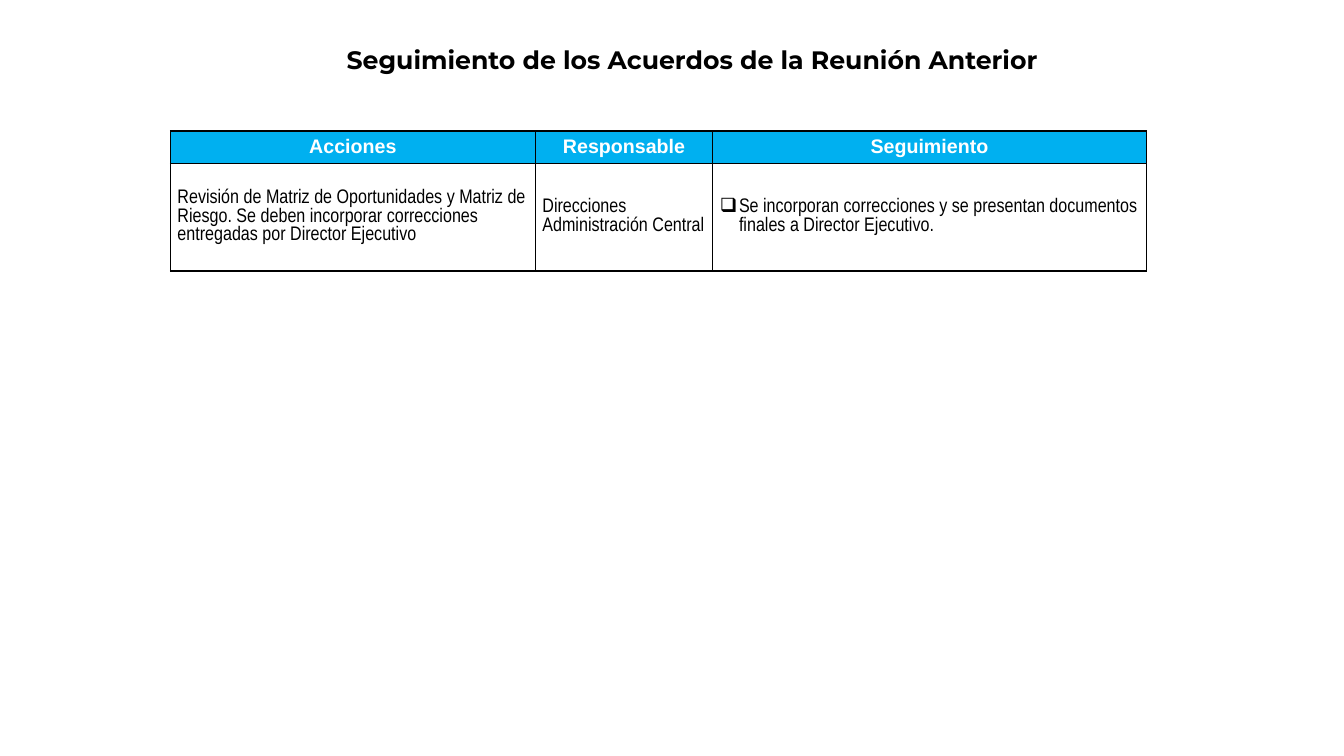
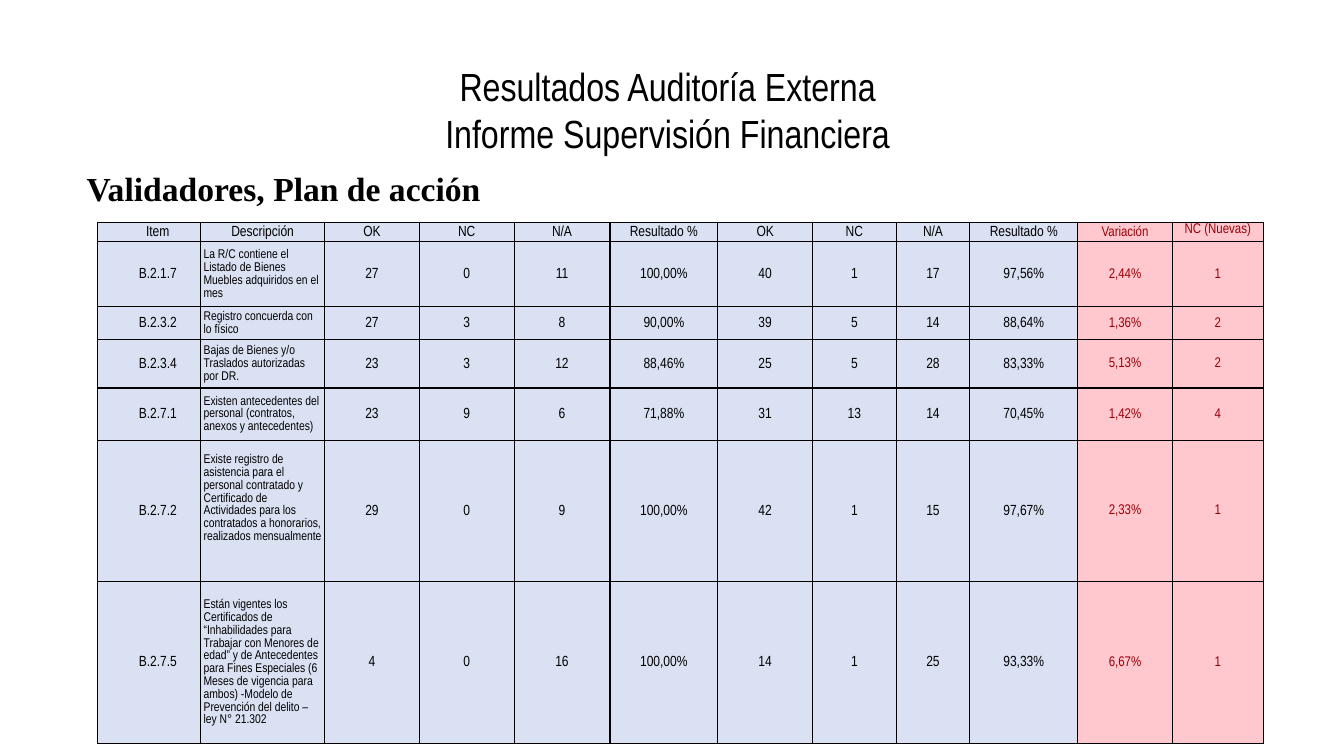
import lxml.etree
import pptx
import pptx.dml.color
import pptx.enum.text
import pptx.oxml.ns
import pptx.util

Inches = pptx.util.Inches
Pt = pptx.util.Pt
ALIGN = pptx.enum.text.PP_ALIGN
ANCHOR = pptx.enum.text.MSO_ANCHOR

BLACK, WHITE, SKY = "000000", "FFFFFF", "00B0F0"
PALE_BLUE, PINK, DARK_RED = "D9E1F2", "FFC7CE", "9C0006"
NARROW = "Arial Narrow"


def rgb(value):
    return pptx.dml.color.RGBColor.from_string(value)


def sub(parent, tag, **attributes):
    element = lxml.etree.SubElement(parent, pptx.oxml.ns.qn(tag))
    for key, value in attributes.items():
        element.set(key, str(value))
    return element


class Deck:
    """Shared style and the slide being filled."""

    def __init__(self):
        self.file = pptx.Presentation()
        self.file.slide_width = Inches(13.33)
        self.file.slide_height = Inches(7.5)
        self.slide = None

    def add_slide(self):
        self.slide = self.file.slides.add_slide(self.file.slide_layouts[5])

    def style(self, paragraph, size, font=NARROW, color=BLACK, bold=False,
              align=ALIGN.LEFT, spacing=None):
        paragraph.alignment = align
        if spacing:
            paragraph.line_spacing = spacing
        for run in paragraph.runs:
            run.font.size = Pt(size)
            run.font.name = font
            run.font.bold = bold
            run.font.color.rgb = rgb(color)

    def indent(self, paragraph, left=0, first=0, bullet=None):
        properties = paragraph._p.get_or_add_pPr()
        properties.set("marL", str(Inches(left)))
        properties.set("indent", str(Inches(first)))
        if bullet:
            sub(sub(properties, "a:buClr"), "a:srgbClr", val=BLACK)
            sub(properties, "a:buChar", char=bullet)

    def title(self, text, left, top, width, height, size, **look):
        heading = self.slide.shapes.title
        heading.left, heading.top = Inches(left), Inches(top)
        heading.width, heading.height = Inches(width), Inches(height)
        frame = heading.text_frame
        frame.text = text
        frame.word_wrap = True
        frame.auto_size = pptx.enum.text.MSO_AUTO_SIZE.NONE
        frame.vertical_anchor = ANCHOR.MIDDLE
        for paragraph in frame.paragraphs:
            self.style(paragraph, size, align=ALIGN.CENTER, **look)
        return frame

    def text(self, text, left, top, width, height, size, **look):
        box = self.slide.shapes.add_textbox(
            Inches(left), Inches(top), Inches(width), Inches(height))
        box.text_frame.word_wrap = True
        box.text_frame.text = text
        self.style(box.text_frame.paragraphs[0], size, **look)

    def table(self, left, top, widths, heights):
        frame = self.slide.shapes.add_table(
            len(heights), len(widths), Inches(left), Inches(top),
            Inches(sum(widths)), Inches(sum(heights)))
        grid = frame.table
        grid.first_row = grid.horz_banding = False
        for column, width in zip(grid.columns, widths):
            column.width = Inches(width)
        for row, height in zip(grid.rows, heights):
            row.height = Inches(height)
        return grid

    def cell(self, cell, text, size, fill, side=0.03, **look):
        cell.text_frame.text = text
        cell.vertical_anchor = ANCHOR.MIDDLE
        cell.margin_left = cell.margin_right = Inches(side)
        cell.margin_top = cell.margin_bottom = 0
        # Borders come before the fill in the cell properties
        properties = cell._tc.get_or_add_tcPr()
        for edge in ("a:lnL", "a:lnR", "a:lnT", "a:lnB"):
            line = sub(properties, edge, w=Pt(1))
            sub(sub(line, "a:solidFill"), "a:srgbClr", val=BLACK)
        cell.fill.solid()
        cell.fill.fore_color.rgb = rgb(fill)
        paragraph = cell.text_frame.paragraphs[0]
        self.style(paragraph, size, **look)
        return paragraph


def agreements_slide(deck):
    deck.add_slide()
    deck.title("Seguimiento de los Acuerdos de la Reunión Anterior",
               2.81, 0.18, 8.11, 0.81, 18, font="Montserrat", bold=True)

    # Agreements table: heading and action per column
    columns = [
        ("Acciones", "Revisión de Matriz de Oportunidades y Matriz de Riesgo. "
         "Se deben incorporar correcciones entregadas por Director Ejecutivo"),
        ("Responsable", "Direcciones Administración Central"),
        ("Seguimiento", "Se incorporan correcciones y se presentan documentos "
         "finales a Director Ejecutivo."),
    ]
    agreements = deck.table(1.69, 1.3, [3.62, 1.76, 4.3], [0.32, 1.07])
    for index, (heading, content) in enumerate(columns):
        deck.cell(agreements.cell(0, index), heading, 14, SKY, font="Arial",
                  color=WHITE, bold=True, align=ALIGN.CENTER)
        follow_up = deck.cell(agreements.cell(1, index), content, 14, WHITE, side=0.07)
    deck.indent(follow_up, 0.19, -0.19, "❑")


def audit_slide(deck):
    deck.add_slide()
    heading = deck.title("Resultados Auditoría Externa\nInforme Supervisión Financiera",
                         2.93, 0.55, 7.24, 1.07, 28, spacing=Pt(33.5))
    deck.indent(heading.paragraphs[0], 0.14)

    # Validators table
    results = ["OK", "NC", "N/A", "Resultado %"]
    rows = [
        ["Item", "Descripción", *results, *results, "Variación", "NC (Nuevas)"],
        ["B.2.1.7", "La R/C contiene el Listado de Bienes Muebles adquiridos en el mes",
         "27", "0", "11", "100,00%", "40", "1", "17", "97,56%", "2,44%", "1"],
        ["B.2.3.2", "Registro concuerda con lo físico",
         "27", "3", "8", "90,00%", "39", "5", "14", "88,64%", "1,36%", "2"],
        ["B.2.3.4", "Bajas de Bienes y/o Traslados autorizadas por DR.",
         "23", "3", "12", "88,46%", "25", "5", "28", "83,33%", "5,13%", "2"],
        ["B.2.7.1", "Existen antecedentes del personal (contratos, anexos y antecedentes)",
         "23", "9", "6", "71,88%", "31", "13", "14", "70,45%", "1,42%", "4"],
        ["B.2.7.2", "Existe registro de asistencia para el personal contratado y "
         "Certificado de Actividades para los contratados a honorarios, "
         "realizados mensualmente",
         "29", "0", "9", "100,00%", "42", "1", "15", "97,67%", "2,33%", "1"],
        ["B.2.7.5", "Están vigentes los Certificados de “Inhabilidades para Trabajar "
         "con Menores de edad” y de Antecedentes para Fines Especiales (6 Meses de "
         "vigencia para ambos) -Modelo de Prevención del delito – ley N° 21.302",
         "4", "0", "16", "100,00%", "14", "1", "25", "93,33%", "6,67%", "1"],
    ]
    widths = [1.02, 1.23, 0.94, 0.94, 0.95, 1.07, 0.94, 0.83, 0.73, 1.07, 0.94, 0.9]
    validators = deck.table(0.97, 2.21, widths, [0.19, 0.64, 0.33, 0.48, 0.52, 1.4, 1.61])
    for r, row in enumerate(rows):
        for c, value in enumerate(row):
            size, fill, color, align = 10.5, PALE_BLUE, BLACK, ALIGN.CENTER
            if c >= 10:  # change against the earlier audit
                size, fill, color = 10, PINK, DARK_RED
            elif c == 1 and r > 0:  # descriptions
                size, align = 9, ALIGN.LEFT
            entry = deck.cell(validators.cell(r, c), value, size, fill,
                              color=color, align=align, spacing=1.07)
            if c == 0:
                deck.indent(entry, first=0.17)
    validators.cell(0, 11).vertical_anchor = ANCHOR.TOP
    validators.cell(5, 1).margin_bottom = Inches(0.25)

    # Section heading
    deck.text("Validadores, Plan de acción", 0.76, 1.62, 12.25, 0.5, 24,
              font="Times New Roman", bold=True, align=ALIGN.JUSTIFY)


def main():
    deck = Deck()
    agreements_slide(deck)
    audit_slide(deck)
    deck.file.save("out.pptx")


if __name__ == "__main__":
    main()
